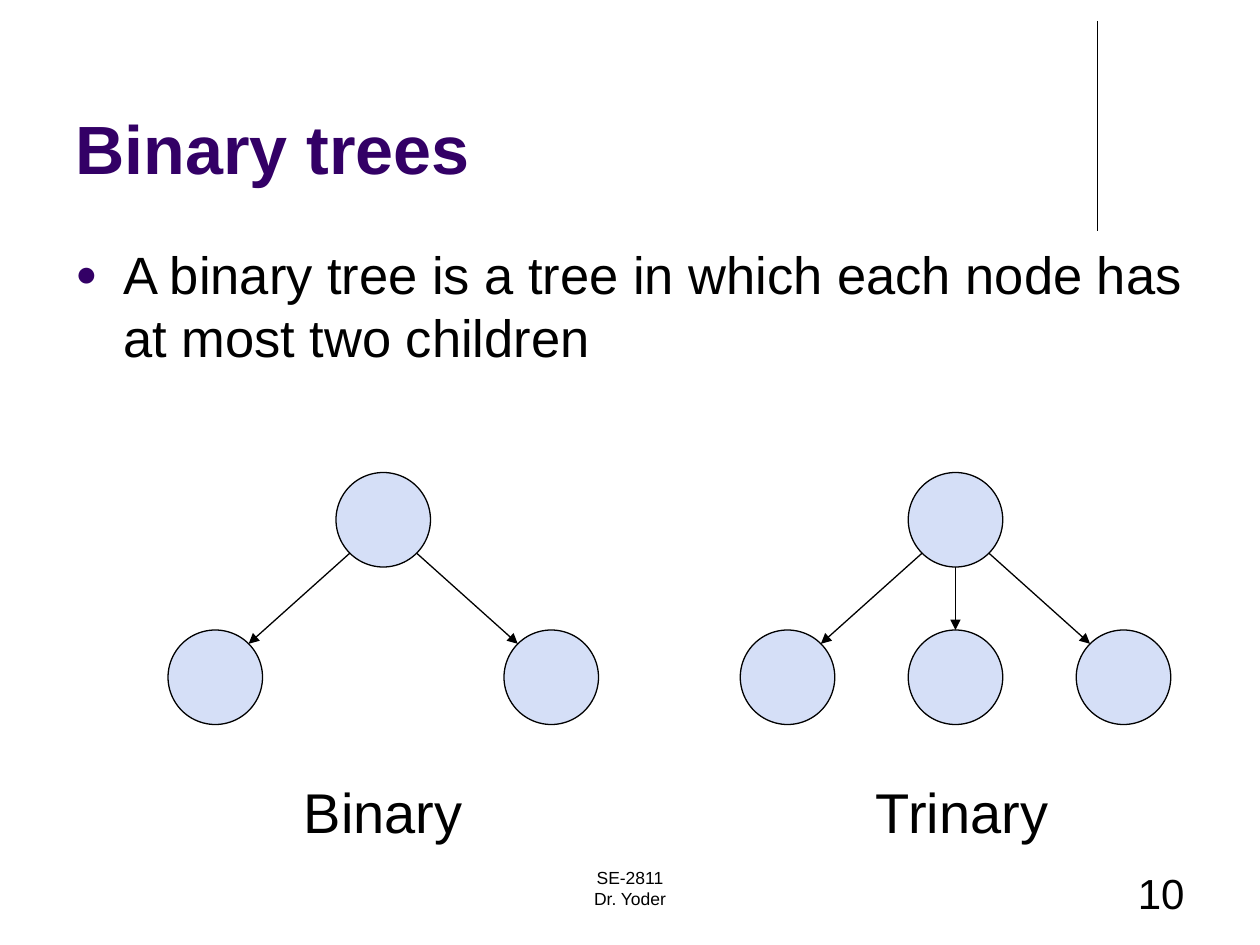
import math

from lxml import etree
from pptx import Presentation
from pptx import util as u
from pptx.dml.color import RGBColor
from pptx.enum import shapes, text
from pptx.oxml.ns import qn

COLORS = {"ink": "000000", "accent": "330066", "node": "D5DFF7"}
FONT = "Arial"
CELL = 1 / 12  # inches: the slide is 120 columns by 90 rows
NODE = 9
ROOT_ROW, CHILD_ROW = 45, 60
CHILD_STEP = 16


def rgb(name):
    return RGBColor.from_string(COLORS[name])


def cells(count):
    return u.Inches(count * CELL)


def write(frame, lines, size=30, color="ink", bold=False, align="LEFT", bullet=None):
    for index, line in enumerate(lines.split("\n")):
        paragraph = frame.paragraphs[0] if index == 0 else frame.add_paragraph()
        paragraph.text = line
        paragraph.alignment = getattr(text.PP_ALIGN, align)
        if bullet:
            add_bullet(paragraph, bullet)
        font = paragraph.runs[0].font
        font.name, font.size, font.bold = FONT, u.Pt(size), bold
        font.color.rgb = rgb(color)


def add_bullet(paragraph, mark):
    props = paragraph._p.get_or_add_pPr()
    indent = u.Inches(0.38)
    props.set("marL", str(indent))
    props.set("indent", str(-indent))
    color = etree.SubElement(props, qn("a:buClr"))
    etree.SubElement(color, qn("a:srgbClr"), val=COLORS["accent"])
    etree.SubElement(props, qn("a:buSzPct"), val="70000")
    etree.SubElement(props, qn("a:buFont"), typeface=FONT)
    etree.SubElement(props, qn("a:buChar"), char=mark)


class TreeSlide:
    """Draws on one slide; all positions are in grid columns and rows."""

    def __init__(self, slide):
        self.slide = slide
        self.line_width = u.Pt(0.75)

    def label(self, col, row, width, height, lines, wrap=True, anchor="TOP", **style):
        box = self.slide.shapes.add_textbox(*map(cells, (col, row, width, height)))
        box.text_frame.word_wrap = wrap
        box.text_frame.vertical_anchor = getattr(text.MSO_ANCHOR, anchor)
        write(box.text_frame, lines, **style)

    def line(self, start, end, arrow=False):
        connector = self.slide.shapes.add_connector(
            shapes.MSO_CONNECTOR.STRAIGHT, *map(cells, (*start, *end)))
        connector.line.color.rgb = rgb("ink")
        connector.line.width = self.line_width
        if arrow:
            etree.SubElement(connector.line._get_or_add_ln(), qn("a:tailEnd"), type="triangle")
        etree.SubElement(connector._element.spPr, qn("a:effectLst"))

    def node(self, center, row):
        circle = self.slide.shapes.add_shape(
            shapes.MSO_SHAPE.OVAL, *map(cells, (center - NODE / 2, row, NODE, NODE)))
        circle.shadow.inherit = False
        circle.fill.solid()
        circle.fill.fore_color.rgb = rgb("node")
        circle.line.color.rgb = rgb("ink")
        circle.line.width = self.line_width

    def tree(self, center, sides):
        """Draw a root and one child per side: -1 left, 0 below, 1 right."""
        radius = NODE / 2
        self.node(center, ROOT_ROW)
        for side in sides:
            child = center + side * CHILD_STEP
            self.node(child, CHILD_ROW)
            # Arrows meet the circles at 45 degrees, or straight below the root
            dx = side * radius * math.sqrt(0.5)
            dy = radius * math.sqrt(0.5) if side else radius
            self.line((center + dx, ROOT_ROW + radius + dy),
                      (child - dx, CHILD_ROW + radius - dy), arrow=True)


def main():
    deck = Presentation()
    deck.slide_width, deck.slide_height = cells(120), cells(90)
    page = TreeSlide(deck.slides.add_slide(deck.slide_layouts[6]))

    page.line((104.5, 2), (104.5, 22))
    page.label(6, 1.5, 99, 17, "Binary trees", anchor="BOTTOM",
               size=39, color="accent", bold=True)
    page.label(6, 22.5, 108, 58,
               "A binary tree is a tree in which each node has at most two children",
               bullet="●")
    page.label(41, 82, 38, 6, "SE-2811\nDr. Yoder", size=10, align="CENTER")
    page.label(86, 82, 28, 6, "10", size=24, align="RIGHT")

    page.tree(36.5, (-1, 1))
    page.tree(91, (-1, 0, 1))
    for col, width, caption in ((27.75, 17.6, "Binary"), (82.25, 19, "Trinary")):
        page.label(col, 73.5, width, 7.7, caption, wrap=False, size=32)

    deck.save("out.pptx")


if __name__ == "__main__":
    main()
